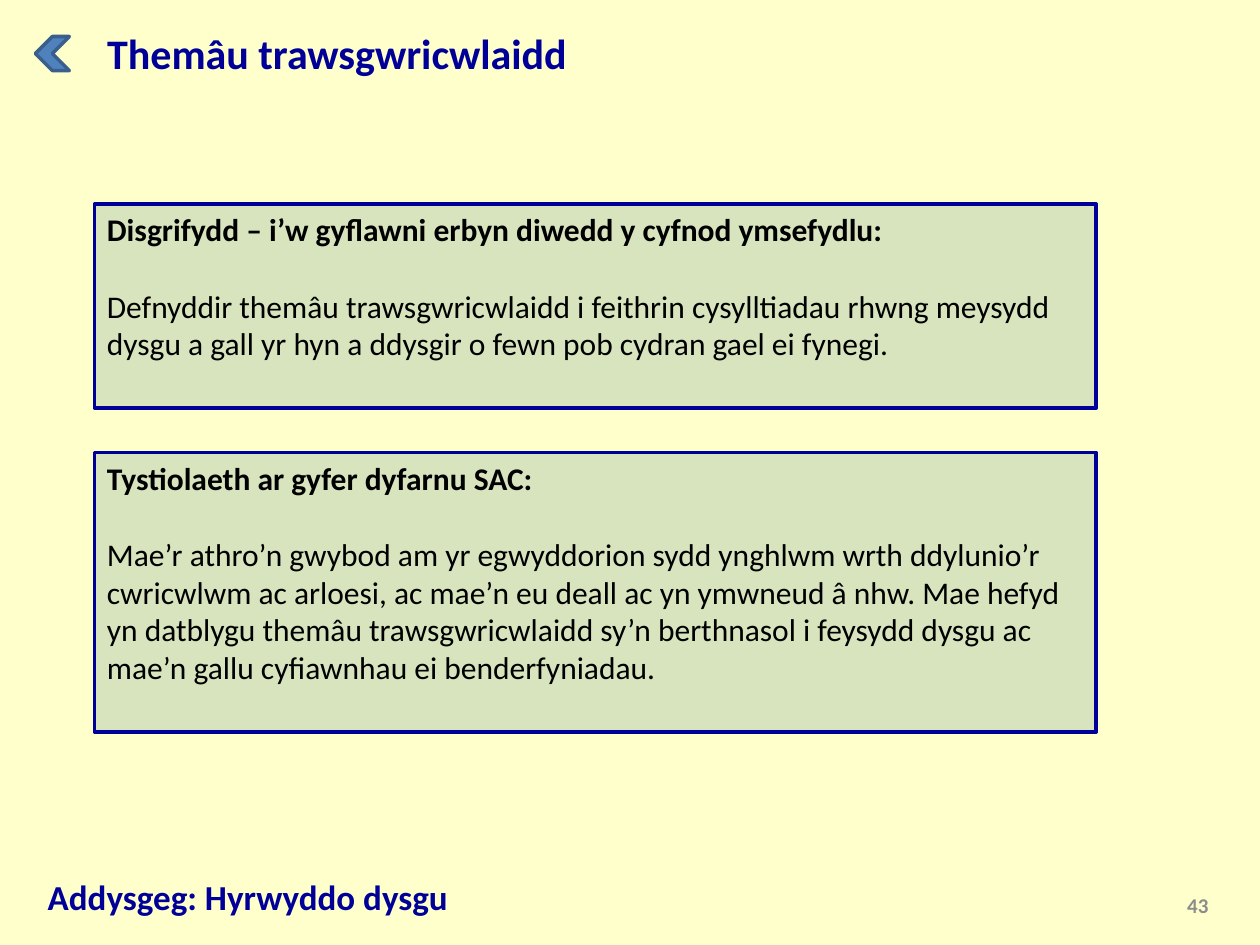
from pptx import Presentation, util as u
from pptx.dml.color import RGBColor
from pptx.enum import shapes, text

CREAM = RGBColor(0xFF, 0xFF, 0xCC)
NAVY = RGBColor(0x00, 0x00, 0x99)
GREEN = RGBColor(0xD7, 0xE4, 0xBD)
BLACK = RGBColor(0x00, 0x00, 0x00)
BLUE = RGBColor(0x4F, 0x81, 0xBD)
DARK_BLUE = RGBColor(0x3A, 0x5F, 0x8C)
GREY = RGBColor(0x8C, 0x8C, 0x8C)

COLUMNS, ROWS = 100, 75
CONTENT_LEFT, CONTENT_WIDTH = 7.5, 79.5
MARGIN_LEFT = 2.8

PANELS = [
    (16.2, 16.2, "Disgrifydd – i’w gyflawni erbyn diwedd y cyfnod ymsefydlu:",
     "Defnyddir themâu trawsgwricwlaidd i feithrin cysylltiadau rhwng meysydd "
     "dysgu a gall yr hyn a ddysgir o fewn pob cydran gael ei fynegi."),
    (35.9, 22.2, "Tystiolaeth ar gyfer dyfarnu SAC:",
     "Mae’r athro’n gwybod am yr egwyddorion sydd ynghlwm wrth ddylunio’r "
     "cwricwlwm ac arloesi, ac mae’n eu deall ac yn ymwneud â nhw. Mae hefyd "
     "yn datblygu themâu trawsgwricwlaidd sy’n berthnasol i feysydd dysgu ac "
     "mae’n gallu cyfiawnhau ei benderfyniadau."),
]


class SlideBuilder:
    font = "Calibri"
    line_width = u.Pt(2)
    heading_gap = u.Pt(22)

    def __init__(self, deck):
        self.deck = deck
        self.page = deck.slides.add_slide(deck.slide_layouts[5])
        self.page.background.fill.solid()
        self.page.background.fill.fore_color.rgb = CREAM

    def area(self, left, top, width, height):
        column = self.deck.slide_width / COLUMNS
        row = self.deck.slide_height / ROWS
        return (round(left * column), round(top * row),
                round(width * column), round(height * row))

    def add_words(self, para, words, size, color, bold=True,
                  align=text.PP_ALIGN.LEFT):
        para.alignment = align
        span = para.add_run()
        span.text = words
        span.font.name = self.font
        span.font.size = u.Pt(size)
        span.font.bold = bold
        span.font.color.rgb = color

    def frame(self, box, anchor=text.MSO_ANCHOR.TOP):
        frame = box.text_frame
        frame.word_wrap = True
        frame.auto_size = text.MSO_AUTO_SIZE.NONE
        frame.vertical_anchor = anchor
        return frame

    def title(self, area, words):
        box = self.page.shapes.title
        box.left, box.top, box.width, box.height = self.area(*area)
        self.add_words(self.frame(box).paragraphs[0], words, 24, NAVY)

    def label(self, area, words, size, color, anchor=text.MSO_ANCHOR.TOP,
              align=text.PP_ALIGN.LEFT):
        box = self.page.shapes.add_textbox(*self.area(*area))
        para = self.frame(box, anchor).paragraphs[0]
        self.add_words(para, words, size, color, align=align)

    def shape(self, kind, area, fill, line):
        box = self.page.shapes.add_shape(kind, *self.area(*area))
        box.shadow.inherit = False
        box.fill.solid()
        box.fill.fore_color.rgb = fill
        box.line.color.rgb = line
        box.line.width = self.line_width
        return box

    def panel(self, top, height, heading, body):
        box = self.shape(shapes.MSO_SHAPE.RECTANGLE,
                         (CONTENT_LEFT, top, CONTENT_WIDTH, height), GREEN, NAVY)
        frame = self.frame(box)
        self.add_words(frame.paragraphs[0], heading, 18, BLACK)
        para = frame.add_paragraph()
        para.space_before = self.heading_gap
        self.add_words(para, body, 18, BLACK, bold=False)

    def back_arrow(self, area):
        arrow = self.shape(shapes.MSO_SHAPE.CHEVRON, area, BLUE, DARK_BLUE)
        arrow.rotation = 180


def main():
    deck = Presentation()
    deck.slide_width, deck.slide_height = u.Inches(10), u.Inches(7.5)
    builder = SlideBuilder(deck)
    builder.title((CONTENT_LEFT, 1.7, 49.6, 5), "Themâu trawsgwricwlaidd")
    builder.label((MARGIN_LEFT, 69, 90.2, 4.4), "Addysgeg: Hyrwyddo dysgu", 20, NAVY)
    for panel in PANELS:
        builder.panel(*panel)
    builder.back_arrow((MARGIN_LEFT, 2.9, 2.7, 2.7))
    builder.label((73.6, 69.8, 23.3, 4), "43", 12, GREY,
                  text.MSO_ANCHOR.MIDDLE, text.PP_ALIGN.RIGHT)
    deck.save("out.pptx")


if __name__ == "__main__":
    main()
